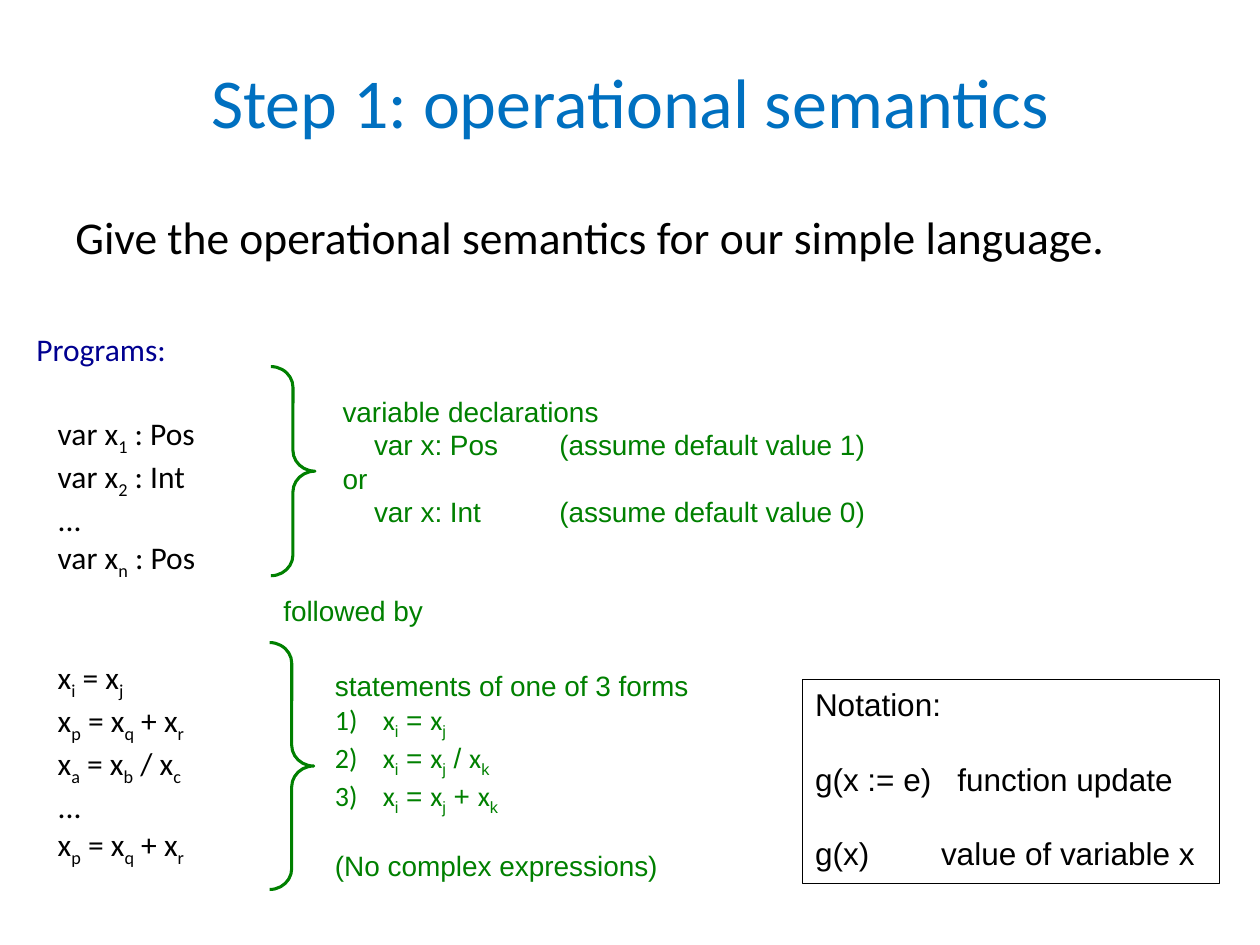
"""Build the slide on the operational semantics of a simple language."""
import pptx
import pptx.dml.color
import pptx.enum.shapes
import pptx.enum.text
import pptx.oxml.ns
import pptx.util
from lxml import etree
from pptx.util import Inches, Pt

BLACK, GREEN = "000000", "008000"


def color(value):
    return pptx.dml.color.RGBColor.from_string(value)


def write(shape, lines, size, ink=BLACK, font="Calibri", symbol_font=None, gaps={}, tabs={}, numbered=()):
    """Write lines; an underscore lowers the next character, symbol_font sets the x before it."""
    frame = shape.text_frame
    frame.word_wrap = True
    for index, line in enumerate(lines):
        para = frame.paragraphs[0] if index == 0 else frame.add_paragraph()
        para.space_before = Pt(gaps.get(index, 0))
        properties = para._p.get_or_add_pPr()
        if index in numbered:
            properties.set("marL", str(Inches(0.38)))
            properties.set("indent", str(-Inches(0.38)))
            etree.SubElement(properties, pptx.oxml.ns.qn("a:buAutoNum"), type="arabicParenR")
        if index in tabs:
            stops = etree.SubElement(properties, pptx.oxml.ns.qn("a:tabLst"))
            for stop in tabs[index]:
                etree.SubElement(stops, pptx.oxml.ns.qn("a:tab"), pos=str(Inches(stop)), algn="l")
        pieces = []
        for number, part in enumerate(line.split("_")):
            if number:
                pieces.append((part[0], font, True))
                part = part[1:]
            if symbol_font and index in numbered and part.endswith("x"):
                pieces += [(part[:-1], font, False), ("x", symbol_font, False)]
            else:
                pieces.append((part, font, False))
        for text, face, lowered in pieces:
            if text:
                span = para.add_run()
                span.text = text
                span.font.size = Pt(size)
                span.font.name = face
                span.font.color.rgb = color(ink)
                if lowered:
                    span.font._element.set("baseline", "-25000")


deck = pptx.Presentation()
deck.slide_width, deck.slide_height = Inches(10), Inches(7.5)
slide = deck.slides.add_slide(deck.slide_layouts[5])

title = slide.shapes.title
title.left, title.top, title.width, title.height = Inches(0.5), Inches(0.17), Inches(9), Inches(1.25)
write(title, ["Step 1: operational semantics"], 40, ink="0070C0")

program = ["var x_1 : Pos", "var x_2 : Int", "...", "var x_n : Pos",
           "x_i = x_j", "x_p = x_q + x_r", "x_a = x_b / x_c", "...", "x_p = x_q + x_r"]
declarations = ["variable declarations", "\tvar x: Pos\t(assume default value 1)",
                "or", "\tvar x: Int\t(assume default value 0)"]
statements = ["statements of one of 3 forms", "x_i = x_j", "x_i = x_j / x_k", "x_i = x_j + x_k",
              "(No complex expressions)"]
green_text = {"size": 16, "ink": GREEN, "font": "Arial"}
text_boxes = [
    ((0.5, 1.61, 9, 0.6), ["Give the operational semantics for our simple language."],
     {"size": 26, "gaps": {0: 5}}),
    ((0.36, 3.24, 2.13, 3.43), program, {"size": 18, "gaps": {4: 44}}),
    ((0.19, 2.57, 1.98, 0.5), ["Programs:"], {"size": 18, "ink": "000090"}),
    ((2.62, 3.08, 6.35, 1.18), declarations,
     {**green_text, "tabs": {1: (0.25, 1.72), 3: (0.25, 1.72)}}),
    ((2.15, 4.66, 1.61, 0.37), ["followed by"], green_text),
    ((2.56, 5.26, 3.5, 1.72), statements,
     {**green_text, "symbol_font": "Calibri", "gaps": {4: 18}, "numbered": (1, 2, 3)}),
]
for place, lines, style in text_boxes:
    box = slide.shapes.add_textbox(*map(Inches, place))
    write(box, lines, **style)

shape_kinds = pptx.enum.shapes.MSO_SHAPE
outlines = [
    (shape_kinds.RIGHT_BRACE, (2.15, 2.91, 0.35, 1.66), GREEN, 1.75),
    (shape_kinds.RIGHT_BRACE, (2.14, 5.1, 0.35, 1.96), GREEN, 1.75),
    (shape_kinds.RECTANGLE, (6.37, 5.39, 3.31, 1.62), BLACK, 0.75),
]
for kind, place, ink, width in outlines:
    shape = slide.shapes.add_shape(kind, *map(Inches, place))
    shape.shadow.inherit = False
    shape.fill.background()
    shape.line.color.rgb = color(ink)
    shape.line.width = Pt(width)
    if kind == shape_kinds.RIGHT_BRACE:
        shape.adjustments[0] = 0.47
    else:
        notation = shape

write(notation, ["Notation:", "g(x := e)\tfunction update", "g(x)\tvalue of variable x"], 18,
      font="Arial", gaps={1: 21, 2: 21}, tabs={1: (1.13,), 2: (1,)})
notation.text_frame.vertical_anchor = pptx.enum.text.MSO_ANCHOR.TOP
for para in notation.text_frame.paragraphs:
    para.alignment = pptx.enum.text.PP_ALIGN.LEFT

deck.save("out.pptx")
